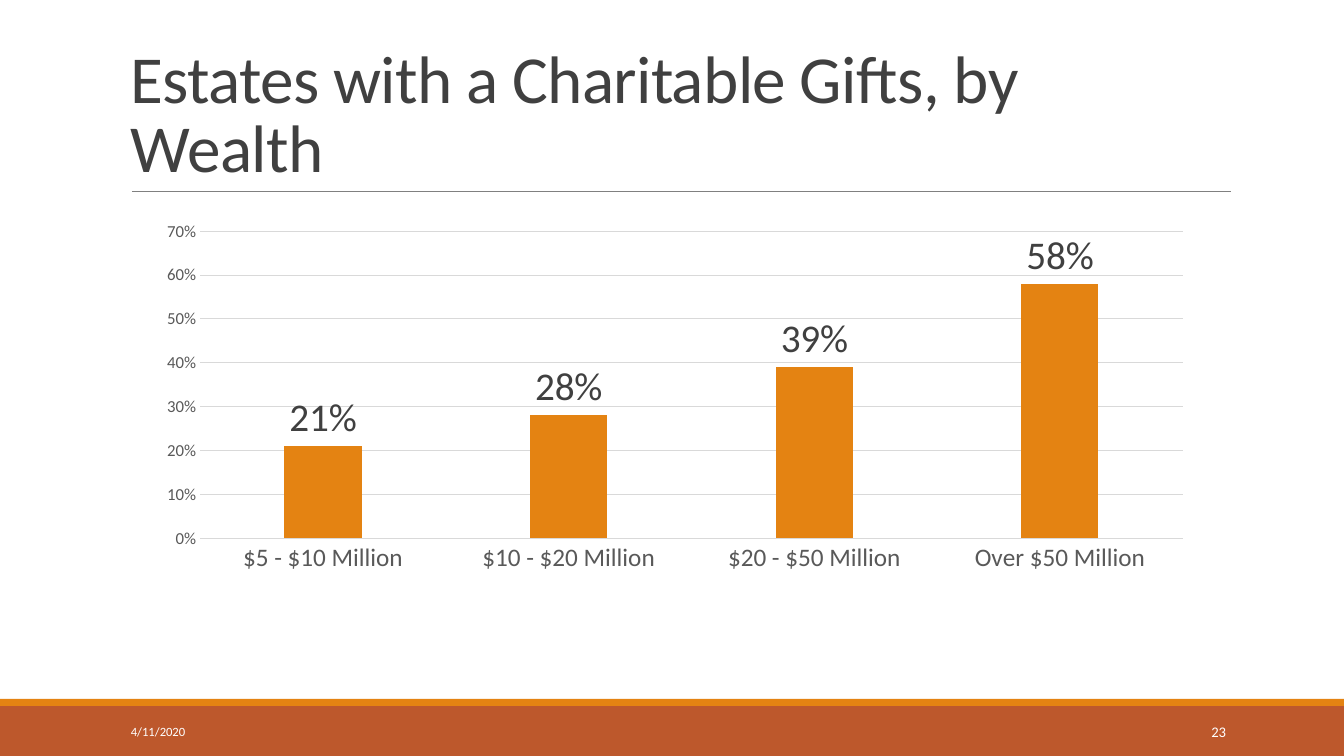
import pptx
import pptx.util
import pptx.chart.data
import pptx.dml.color
import pptx.enum.chart
import pptx.enum.shapes
import pptx.enum.text
import pptx.oxml.ns
import lxml.etree

EMU_PER_PX = 914400 / 100.8
FONT = "Calibri"
COLORS = {
    "white": "FFFFFF",
    "orange": "E48312",
    "rust": "BD582C",
    "rule": "808080",
    "title": "404040",
    "axis": "595959",
    "grid": "D9D9D9",
}
ESTATES = {
    "$5 - $10 Million": 0.21,
    "$10 - $20 Million": 0.28,
    "$20 - $50 Million": 0.39,
    "Over $50 Million": 0.58,
}
ALIGN = pptx.enum.text.PP_ALIGN
ANCHOR = pptx.enum.text.MSO_ANCHOR


def px(n):
    return pptx.util.Emu(round(n * EMU_PER_PX))


def rgb(name):
    return pptx.dml.color.RGBColor.from_string(COLORS[name])


def set_font(font, size, color):
    font.name = FONT
    font.size = pptx.util.Pt(size)
    font.bold = False
    font.color.rgb = rgb(color)


def set_line(line, color, width):
    line.color.rgb = rgb(color)
    line.width = pptx.util.Pt(width)


def add_text(s, text, box, size=10, color="white", align=ALIGN.LEFT,
             anchor=ANCHOR.MIDDLE, line_spacing=1.0, tracking=0):
    sp = s.shapes.add_textbox(*map(px, box))
    tf = sp.text_frame
    tf.word_wrap = True
    tf.vertical_anchor = anchor
    p = tf.paragraphs[0]
    p.alignment = align
    p.line_spacing = line_spacing
    r = p.add_run()
    r.text = text
    set_font(r.font, size, color)
    if tracking:
        r._r.get_or_add_rPr().set("spc", str(round(tracking * 100)))


def add_band(s, box, color):
    sp = s.shapes.add_shape(pptx.enum.shapes.MSO_SHAPE.RECTANGLE, *map(px, box))
    sp.shadow.inherit = False
    sp.fill.solid()
    sp.fill.fore_color.rgb = rgb(color)
    sp.line.fill.background()


def add_header(s, box):
    x, y, w, h = box
    rule = s.shapes.add_connector(
        pptx.enum.shapes.MSO_CONNECTOR.STRAIGHT,
        px(x + 11), px(y + h), px(x + w + 1), px(y + h))
    set_line(rule.line, "rule", 0.5)
    lxml.etree.SubElement(rule._element.spPr, pptx.oxml.ns.qn("a:effectLst"))
    add_text(s, "Estates with a Charitable Gifts, by Wealth", box, size=48,
             color="title", anchor=ANCHOR.BOTTOM, line_spacing=0.85, tracking=-0.5)


def add_estate_chart(s, box):
    data = pptx.chart.data.CategoryChartData(number_format="0%")
    data.categories = list(ESTATES)
    data.add_series("Series 1", list(ESTATES.values()))
    chart = s.shapes.add_chart(
        pptx.enum.chart.XL_CHART_TYPE.COLUMN_CLUSTERED, *map(px, box), data).chart
    chart.has_title = False
    chart.has_legend = False
    set_font(chart.font, 10, "axis")

    plot = chart.plots[0]
    plot.gap_width = 219
    plot.overlap = -27
    plot.vary_by_categories = False
    series = plot.series[0]
    series.format.fill.solid()
    series.format.fill.fore_color.rgb = rgb("orange")
    labels = series.data_labels
    labels.show_value = True
    labels.position = pptx.enum.chart.XL_LABEL_POSITION.OUTSIDE_END
    labels.number_format = "0%"
    labels.number_format_is_linked = False
    set_font(labels.font, 28, "title")

    for axis, size in ((chart.category_axis, 18), (chart.value_axis, 12)):
        axis.major_tick_mark = pptx.enum.chart.XL_TICK_MARK.NONE
        axis.minor_tick_mark = pptx.enum.chart.XL_TICK_MARK.NONE
        set_font(axis.tick_labels.font, size, "axis")
    set_line(chart.category_axis.format.line, "grid", 0.75)
    values = chart.value_axis
    values.minimum_scale = 0
    values.maximum_scale = 0.7
    values.major_unit = 0.1
    values.format.line.fill.background()
    values.has_major_gridlines = True
    set_line(values.major_gridlines.format.line, "grid", 0.75)
    values.tick_labels.number_format = "0%"
    values.tick_labels.number_format_is_linked = False


def add_footer(s, box):
    x, y, w, h = box
    stripe = 7
    add_band(s, (x, y + stripe, w, h - stripe), "rust")
    add_band(s, (x, y, w, stripe), "orange")
    add_text(s, "4/11/2020", (x + 121, y + 13, 272, 40), size=9)
    add_text(s, "23", (x + 1092, y + 13, 144, 40), size=10.5, align=ALIGN.RIGHT)


def main():
    prs = pptx.Presentation()
    prs.slide_width = px(1344)
    prs.slide_height = px(756)
    s = prs.slides.add_slide(prs.slide_layouts[6])
    s.background.fill.solid()
    s.background.fill.fore_color.rgb = rgb("white")
    add_header(s, (121, 31, 1109, 160))
    add_estate_chart(s, (146, 214, 1058, 366))
    add_footer(s, (0, 699, 1344, 57))
    prs.save("out.pptx")


if __name__ == "__main__":
    main()
